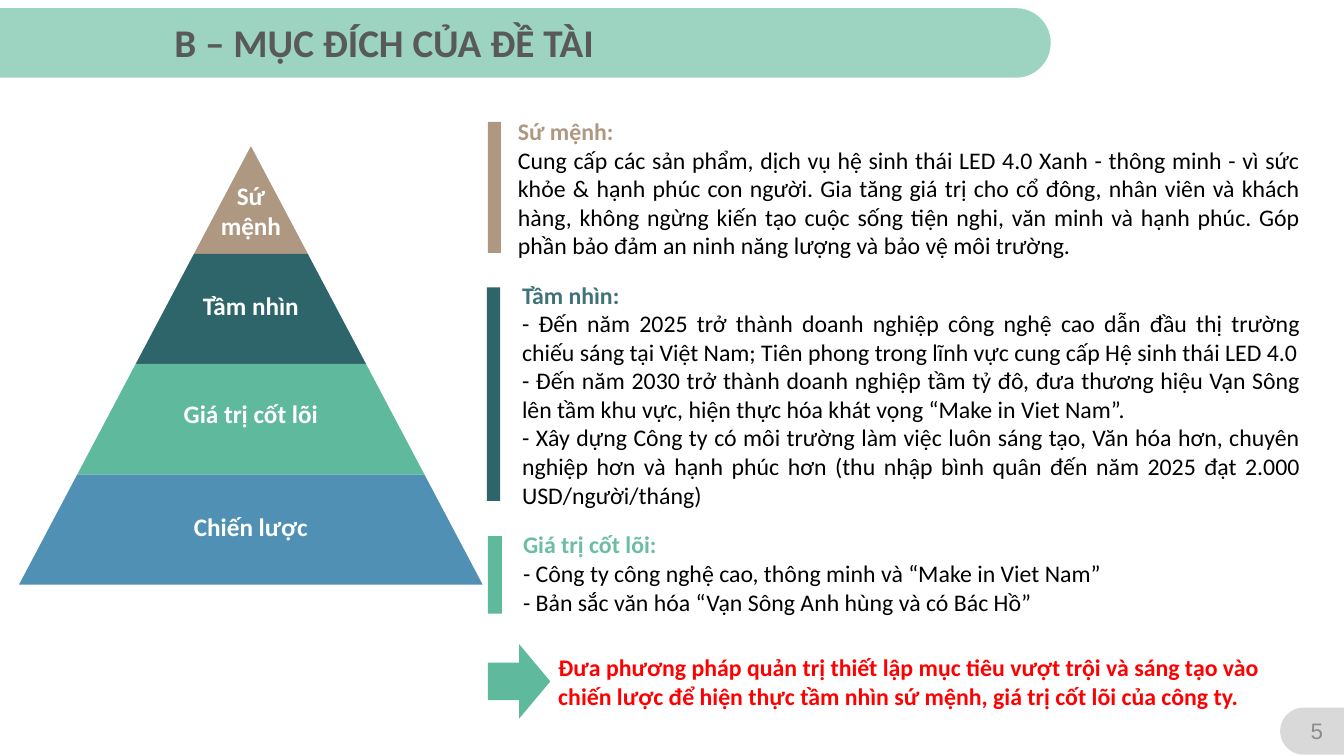
from dataclasses import dataclass

from pptx import Presentation
from pptx.dml.color import RGBColor
from pptx.enum.shapes import MSO_SHAPE
from pptx.enum.text import MSO_ANCHOR, MSO_AUTO_SIZE, PP_ALIGN
from pptx.shapes.autoshape import Shape
from pptx.slide import Slide
from pptx.util import Pt

RECTANGLE = MSO_SHAPE.RECTANGLE
RIGHT_ARROW = MSO_SHAPE.RIGHT_ARROW
ROUND_TOP = MSO_SHAPE.ROUND_2_SAME_RECTANGLE
LEFT, CENTER, JUSTIFY = PP_ALIGN.LEFT, PP_ALIGN.CENTER, PP_ALIGN.JUSTIFY
TOP, MIDDLE = MSO_ANCHOR.TOP, MSO_ANCHOR.MIDDLE
FIT_SHAPE = MSO_AUTO_SIZE.SHAPE_TO_FIT_TEXT

MINT = RGBColor(0x9C, 0xD4, 0xC1)
LIGHT_GRAY = RGBColor(0xD9, 0xD9, 0xD9)
MID_GRAY = RGBColor(0x8C, 0x8C, 0x8C)
DARK_GRAY = RGBColor(0x59, 0x59, 0x59)
SAND = RGBColor(0xAF, 0x98, 0x82)
TEAL = RGBColor(0x2D, 0x65, 0x6A)
SOFT_TEAL = RGBColor(0x40, 0x73, 0x77)
GREEN = RGBColor(0x5F, 0xB9, 0x9C)
SOFT_GREEN = RGBColor(0x6B, 0xBE, 0xA3)
BLUE = RGBColor(0x50, 0x90, 0xB4)
RED = RGBColor(0xFF, 0x00, 0x00)
BLACK = RGBColor(0x00, 0x00, 0x00)
WHITE = RGBColor(0xFF, 0xFF, 0xFF)

SLIDE_WIDTH, SLIDE_HEIGHT = 960, 540
APEX_X, APEX_Y = 179.2, 104.4
BASE_Y, BASE_HALF_WIDTH = 417.6, 165.6


@dataclass(frozen=True)
class Box:
    left: float
    top: float
    width: float
    height: float


@dataclass(frozen=True)
class Style:
    size: float
    color: RGBColor
    bold: bool = True
    align: PP_ALIGN = LEFT
    font: str = "Calibri"


@dataclass(frozen=True)
class Tier:
    label: str
    color: RGBColor
    top: float
    bottom: float
    label_top: float
    label_height: float = 28.8


@dataclass(frozen=True)
class Section:
    heading: str
    heading_color: RGBColor
    lines: tuple[str, ...]
    text_box: Box
    bar_color: RGBColor
    bar_box: Box


TIERS = (
    Tier("Sứ mệnh", SAND, APEX_Y, 181.4, 125.3, 51.1),
    Tier("Tầm nhìn", TEAL, 181.4, 260, 203.8),
    Tier("Giá trị cốt lõi", GREEN, 260, 339, 280.8),
    Tier("Chiến lược", BLUE, 339, BASE_Y, 361.4),
)

SECTIONS = (
    Section(
        "Sứ mệnh:", SAND,
        ("Cung cấp các sản phẩm, dịch vụ hệ sinh thái LED 4.0 Xanh - thông minh - vì sức "
         "khỏe & hạnh phúc con người. Gia tăng giá trị cho cổ đông, nhân viên và khách "
         "hàng, không ngừng kiến tạo cuộc sống tiện nghi, văn minh và hạnh phúc. Góp "
         "phần bảo đảm an ninh năng lượng và bảo vệ môi trường.",),
        Box(362.9, 79.9, 573.1, 110.2), SAND, Box(348.5, 87.1, 9.4, 93.6)),
    Section(
        "Tầm nhìn:", SOFT_TEAL,
        ("- Đến năm 2025 trở thành doanh nghiệp công nghệ cao dẫn đầu thị trường chiếu "
         "sáng tại Việt Nam; Tiên phong trong lĩnh vực cung cấp Hệ sinh thái LED 4.0",
         "- Đến năm 2030 trở thành doanh nghiệp tầm tỷ đô, đưa thương hiệu Vạn Sông "
         "lên tầm khu vực, hiện thực hóa khát vọng “Make in Viet Nam”.",
         "- Xây dựng Công ty có môi trường làm việc luôn sáng tạo, Văn hóa hơn, chuyên "
         "nghiệp hơn và hạnh phúc hơn (thu nhập bình quân đến năm 2025 đạt 2.000 "
         "USD/người/tháng)"),
        Box(365.8, 196.6, 570.2, 172.1), TEAL, Box(347.8, 205.2, 9.4, 152.6)),
    Section(
        "Giá trị cốt lõi:", SOFT_GREEN,
        ("- Công ty công nghệ cao, thông minh và “Make in Viet Nam”",
         "- Bản sắc văn hóa “Vạn Sông Anh hùng và có Bác Hồ”"),
        Box(366.5, 375.1, 529.2, 69.1), GREEN, Box(348.5, 383, 10.1, 55.4)),
)


def add_block(page: Slide, kind: MSO_SHAPE, box: Box, color: RGBColor) -> Shape:
    block = page.shapes.add_shape(
        kind, Pt(box.left), Pt(box.top), Pt(box.width), Pt(box.height))
    paint(block, color)
    return block


def paint(shape: Shape, color: RGBColor) -> None:
    shape.fill.solid()
    shape.fill.fore_color.rgb = color
    shape.line.fill.background()
    shape.shadow.inherit = False


def add_side_tab(page: Slide, box: Box, color: RGBColor, rotation: int) -> None:
    """Draw a tab filling the box, its rounded end turned sideways."""
    upright = Box(box.left + (box.width - box.height) / 2,
                  box.top + (box.height - box.width) / 2, box.height, box.width)
    tab = add_block(page, ROUND_TOP, upright, color)
    tab.adjustments[0] = 0.5
    tab.adjustments[1] = 0
    tab.rotation = rotation


def add_text(page: Slide, box: Box, lines: tuple[str, ...], styles: tuple[Style, ...],
             anchor: MSO_ANCHOR = TOP) -> None:
    """Write one paragraph a line; the last style serves all remaining lines."""
    frame = page.shapes.add_textbox(
        Pt(box.left), Pt(box.top), Pt(box.width), Pt(box.height)).text_frame
    frame.text = "\n".join(lines)
    frame.word_wrap = True
    frame.auto_size = FIT_SHAPE
    frame.vertical_anchor = anchor
    for index, para in enumerate(frame.paragraphs):
        style = styles[min(index, len(styles) - 1)]
        para.alignment = style.align
        for span in para.runs:
            span.font.name = style.font
            span.font.size = Pt(style.size)
            span.font.bold = style.bold
            span.font.color.rgb = style.color


def half_width(level: float) -> float:
    return BASE_HALF_WIDTH * (level - APEX_Y) / (BASE_Y - APEX_Y)


def add_tier(page: Slide, tier: Tier) -> None:
    upper, lower = half_width(tier.top), half_width(tier.bottom)
    corners = [(APEX_X + upper, tier.top), (APEX_X + lower, tier.bottom),
               (APEX_X - lower, tier.bottom)]
    outline = page.shapes.build_freeform(Pt(APEX_X - upper), Pt(tier.top))
    outline.add_line_segments([(Pt(x), Pt(y)) for x, y in corners], close=True)
    paint(outline.convert_to_shape(), tier.color)


def add_tier_label(page: Slide, tier: Tier) -> None:
    reach = half_width(tier.bottom) - 2
    add_text(page, Box(APEX_X - reach, tier.label_top, 2 * reach, tier.label_height),
             (tier.label,), (Style(18, WHITE, align=CENTER),))


def add_section(page: Slide, section: Section) -> None:
    add_block(page, RECTANGLE, section.bar_box, section.bar_color)
    add_text(page, section.text_box, (section.heading, *section.lines),
             (Style(17, section.heading_color), Style(17, BLACK, False, JUSTIFY)))


def main() -> None:
    deck = Presentation()
    deck.slide_width, deck.slide_height = Pt(SLIDE_WIDTH), Pt(SLIDE_HEIGHT)
    page = deck.slides.add_slide(deck.slide_layouts[6])

    # Title band and page number
    add_side_tab(page, Box(0, 5.8, 750.5, 49.7), MINT, 90)
    add_text(page, Box(117.4, 9.4, 581.8, 41), ("B – MỤC ĐÍCH CỦA ĐỀ TÀI",),
             (Style(28, DARK_GRAY),))
    add_side_tab(page, Box(914.4, 505.4, 45.6, 33.6), LIGHT_GRAY, 270)
    add_text(page, Box(923, 507.6, 35.3, 28.8), ("5",),
             (Style(16, MID_GRAY, False, CENTER, "Arial"),), MIDDLE)

    # Pyramid
    for tier in TIERS:
        add_tier(page, tier)
    for tier in TIERS:
        add_tier_label(page, tier)

    # Explanations
    for section in SECTIONS:
        add_section(page, section)

    # Conclusion
    add_block(page, RIGHT_ARROW, Box(348.5, 460.1, 44.6, 53.3), GREEN)
    add_text(page, Box(391.7, 463, 545, 48.2),
             ("Đưa phương pháp quản trị thiết lập mục tiêu vượt trội và sáng tạo vào chiến "
              "lược để hiện thực tầm nhìn sứ mệnh, giá trị cốt lõi của công ty.",),
             (Style(17, RED),))

    deck.save("out.pptx")


if __name__ == "__main__":
    main()
